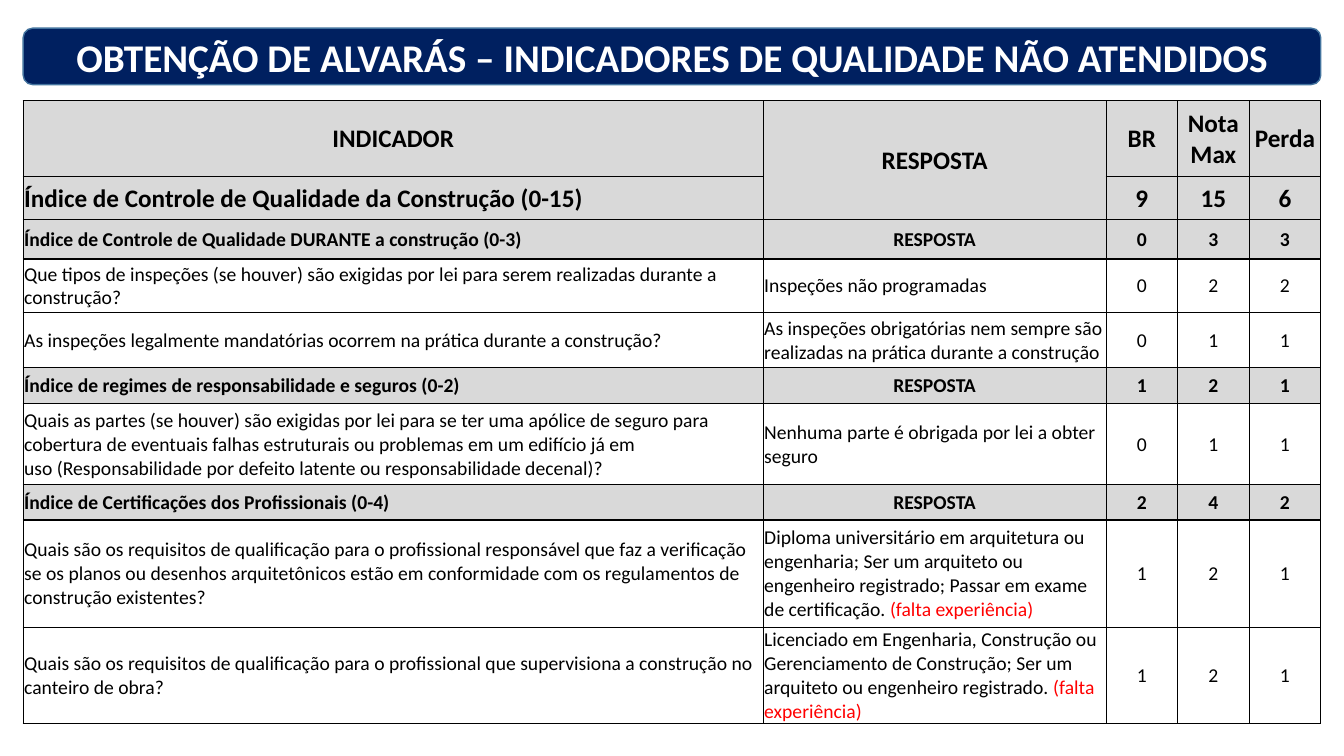
from dataclasses import dataclass

from lxml import etree
from pptx import Presentation
from pptx.dml.color import RGBColor
from pptx.enum.shapes import MSO_SHAPE
from pptx.enum.text import MSO_ANCHOR, PP_ALIGN
from pptx.oxml.ns import qn
from pptx.util import Pt

PX = 9144  # 100 px to the inch
ROUNDED = MSO_SHAPE.ROUNDED_RECTANGLE
MIDDLE = MSO_ANCHOR.MIDDLE
LEFT, CENTER = PP_ALIGN.LEFT, PP_ALIGN.CENTER


@dataclass(frozen=True)
class Theme:
    font: str = "Calibri"
    navy: str = "002060"
    navy_edge: str = "43739E"
    white: str = "FFFFFF"
    black: str = "000000"
    gray: str = "D9D9D9"
    red: str = "FF0000"
    title_size: int = 28
    head_size: int = 18
    body_size: int = 14
    thick: float = 1
    thin: float = 0.5


THEME = Theme()
HEAD, SECTION, QUESTION = "head", "section", "question"
ROW_STYLES = {  # size, bold, fill
    HEAD: (THEME.head_size, True, THEME.gray),
    SECTION: (THEME.body_size, True, THEME.gray),
    QUESTION: (THEME.body_size, False, THEME.white),
}

TITLE = "OBTENÇÃO DE ALVARÁS – INDICADORES DE QUALIDADE NÃO ATENDIDOS"
GAP_NOTE = "(falta experiência)"
COLUMN_WIDTHS = (734, 340, 71, 71, 71)
INDICATORS = [  # kind, height, cells
    (HEAD, 75, ("INDICADOR", "RESPOSTA", "BR", "Nota Max", "Perda")),
    (HEAD, 43, ("Índice de Controle de Qualidade da Construção (0-15)",
                None, "9", "15", "6")),
    (SECTION, 39, ("Índice de Controle de Qualidade DURANTE a construção (0-3)",
                   "RESPOSTA", "0", "3", "3")),
    (QUESTION, 53, ("Que tipos de inspeções (se houver) são exigidas por lei para "
                    "serem realizadas durante a construção?",
                    "Inspeções não programadas", "0", "2", "2")),
    (QUESTION, 55, ("As inspeções legalmente mandatórias ocorrem na prática durante "
                    "a construção?",
                    "As inspeções obrigatórias nem sempre são realizadas na prática "
                    "durante a construção", "0", "1", "1")),
    (SECTION, 35, ("Índice de regimes de responsabilidade e seguros (0-2)",
                   "RESPOSTA", "1", "2", "1")),
    (QUESTION, 81, ("Quais as partes (se houver) são exigidas por lei para se ter uma "
                    "apólice de seguro para cobertura de eventuais falhas estruturais "
                    "ou problemas em um edifício já em\n"
                    "uso (Responsabilidade por defeito latente ou responsabilidade "
                    "decenal)?",
                    "Nenhuma parte é obrigada por lei a obter seguro", "0", "1", "1")),
    (SECTION, 35, ("Índice de Certificações dos Profissionais (0-4)",
                   "RESPOSTA", "2", "4", "2")),
    (QUESTION, 106, ("Quais são os requisitos de qualificação para o profissional "
                     "responsável que faz a verificação se os planos ou desenhos "
                     "arquitetônicos estão em conformidade com os regulamentos de "
                     "construção existentes?",
                     "Diploma universitário em arquitetura ou engenharia; Ser um "
                     "arquiteto ou engenheiro registrado; Passar em exame de "
                     f"certificação. {GAP_NOTE}", "1", "2", "1")),
    (QUESTION, 81, ("Quais são os requisitos de qualificação para o profissional que "
                    "supervisiona a construção no canteiro de obra?",
                    "Licenciado em Engenharia, Construção ou Gerenciamento de "
                    "Construção; Ser um arquiteto ou engenheiro registrado. "
                    f"{GAP_NOTE}", "1", "2", "1")),
]


def rgb(color):
    return RGBColor.from_string(color)


def set_format(target, values):
    for name, value in values.items():
        setattr(target, name, value)


def add_run(paragraph, text, size, bold, color):
    run = paragraph.add_run()
    run.text = text
    set_format(run.font, {"name": THEME.font, "size": Pt(size), "bold": bold})
    run.font.color.rgb = rgb(color)


def add_title(slide, left, top, width, height):
    banner = slide.shapes.add_shape(
        ROUNDED, left * PX, top * PX, width * PX, height * PX)
    banner.shadow.inherit = False
    banner.fill.solid()
    banner.fill.fore_color.rgb = rgb(THEME.navy)
    banner.line.color.rgb = rgb(THEME.navy_edge)
    banner.line.width = Pt(THEME.thick)
    set_format(banner.text_frame, {"word_wrap": True, "vertical_anchor": MIDDLE})
    heading = banner.text_frame.paragraphs[0]
    heading.alignment = CENTER
    add_run(heading, TITLE, THEME.title_size, True, THEME.white)


def set_borders(cell, left, right, top, bottom):
    properties = cell._tc.get_or_add_tcPr()
    for side, width in zip("LRTB", (left, right, top, bottom)):
        edge = etree.SubElement(properties, qn(f"a:ln{side}"), w=str(Pt(width)))
        fill = etree.SubElement(edge, qn("a:solidFill"))
        etree.SubElement(fill, qn("a:srgbClr"), val=THEME.black)


def fill_cell(cell, text, alignment, size, bold):
    """Write one paragraph per line, with the gap note in red."""
    for index, line in enumerate(text.split("\n")):
        frame = cell.text_frame
        paragraph = frame.add_paragraph() if index else frame.paragraphs[0]
        paragraph.alignment = alignment
        answer, note, _ = line.partition(GAP_NOTE)
        add_run(paragraph, answer, size, bold, THEME.black)
        if note:
            add_run(paragraph, note, size, bold, THEME.red)


def add_indicators(slide, left, top, width, height):
    table = slide.shapes.add_table(
        len(INDICATORS), len(COLUMN_WIDTHS),
        left * PX, top * PX, width * PX, height * PX).table
    set_format(table, {"first_row": False, "horz_banding": False})
    for column, column_width in zip(table.columns, COLUMN_WIDTHS):
        column.width = column_width * PX

    kinds = [kind for kind, _, _ in INDICATORS]
    # Rows of one kind are parted by a thin rule, all others by a thick one.
    rules = [THEME.thin if above == below else THEME.thick
             for above, below in zip([None] + kinds, kinds + [None])]
    last = len(COLUMN_WIDTHS) - 1
    for r, (kind, row_height, texts) in enumerate(INDICATORS):
        table.rows[r].height = row_height * PX
        size, bold, fill = ROW_STYLES[kind]
        for c, text in enumerate(texts):
            cell = table.cell(r, c)
            set_format(cell, {
                "margin_left": PX, "margin_right": PX, "margin_top": PX,
                "margin_bottom": 0, "vertical_anchor": MIDDLE})
            set_borders(cell,
                        THEME.thick if c == 0 else THEME.thin,
                        THEME.thick if c == last else THEME.thin,
                        rules[r], rules[r + 1])
            cell.fill.solid()
            cell.fill.fore_color.rgb = rgb(fill)
            if text is None:
                table.cell(r - 1, c).merge(cell)
                continue
            is_prose = (c == 0 and r > 0) or (c == 1 and kind == QUESTION)
            fill_cell(cell, text, LEFT if is_prose else CENTER, size, bold)


def main():
    deck = Presentation()
    set_format(deck, {"slide_width": 1333 * PX, "slide_height": 750 * PX})
    slide = deck.slides.add_slide(deck.slide_layouts[6])
    add_title(slide, 23, 28, 1287, 56)
    add_indicators(slide, 23, 100, sum(COLUMN_WIDTHS),
                   sum(height for _, height, _ in INDICATORS))
    deck.save("out.pptx")


if __name__ == "__main__":
    main()
